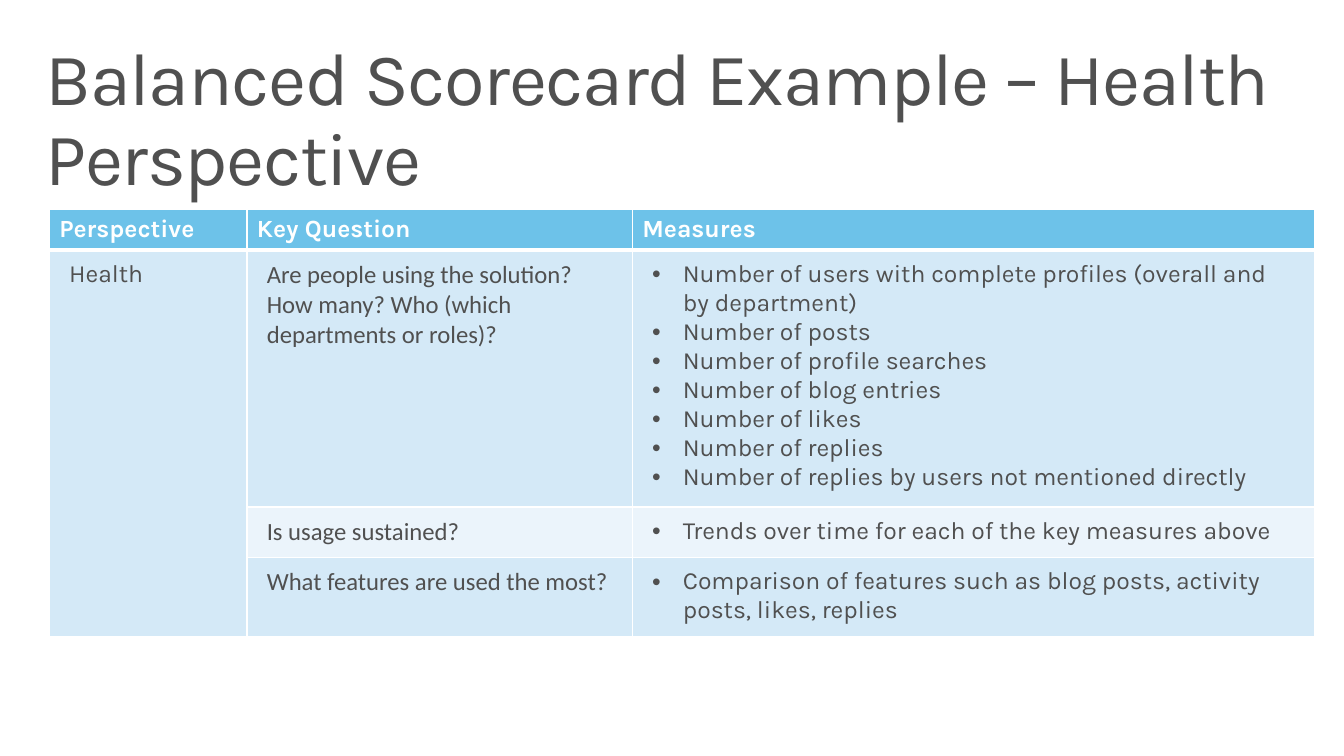
from lxml import etree
from pptx import Presentation
from pptx.dml.color import RGBColor
from pptx.enum import text
from pptx.oxml import ns
from pptx.util import Inches, Pt

WHITE = RGBColor(0xFF, 0xFF, 0xFF)
GRAY = RGBColor(0x50, 0x50, 0x50)
HEADER_BLUE = RGBColor(0x6D, 0xC2, 0xE9)
PALE_BLUE = RGBColor(0xD4, 0xE9, 0xF7)
PALEST_BLUE = RGBColor(0xEB, 0xF4, 0xFB)


def write(frame, lines, size=18, font="Karla", color=GRAY, bold=False,
          bullet=False, spacing=None, tracking=None):
    for i, line in enumerate(lines):
        paragraph = frame.paragraphs[0] if i == 0 else frame.add_paragraph()
        if bullet:
            properties = paragraph._p.get_or_add_pPr()
            properties.set("marL", str(Inches(0.31)))
            properties.set("indent", str(Inches(-0.31)))
            etree.SubElement(properties, ns.qn("a:buFont"), typeface="Arial")
            etree.SubElement(properties, ns.qn("a:buChar"), char="•")
        if spacing:
            paragraph.line_spacing = spacing
        run = paragraph.add_run()
        run.text = line
        run.font.size = Pt(size)
        run.font.name = font
        run.font.bold = bold
        run.font.color.rgb = color
        if tracking:
            run._r.get_or_add_rPr().set("spc", str(tracking))


def style_cell(cell, fill, bottom=1):
    properties = cell._tc.get_or_add_tcPr()
    for side, width in (("L", 1), ("R", 1), ("T", 1), ("B", bottom)):
        border = etree.SubElement(properties, ns.qn(f"a:ln{side}"), w=str(Pt(width)))
        paint = etree.SubElement(border, ns.qn("a:solidFill"))
        etree.SubElement(paint, ns.qn("a:srgbClr"), val=str(WHITE))
    cell.fill.solid()
    cell.fill.fore_color.rgb = fill


prs = Presentation()
prs.slide_width = Inches(13.6)
prs.slide_height = Inches(7.65)
slide = prs.slides.add_slide(prs.slide_layouts[6])

title = slide.shapes.add_textbox(Inches(0.3), Inches(0.32), Inches(13), Inches(1)).text_frame
title.word_wrap = True
title.vertical_anchor = text.MSO_ANCHOR.TOP
title.margin_left = title.margin_right = Inches(0.16)
title.margin_top = title.margin_bottom = Inches(0.1)
write(title, ["Balanced Scorecard Example – Health Perspective"],
      size=54, spacing=0.9, tracking=-100)

headings = ["Perspective", "Key Question", "Measures"]
questions = [
    ("Are people using the solution? How many? Who (which departments or roles)?",
     ["Number of users with complete profiles (overall and by department)",
      "Number of posts",
      "Number of profile searches",
      "Number of blog entries",
      "Number of likes",
      "Number of replies",
      "Number of replies by users not mentioned directly"]),
    ("Is usage sustained?",
     ["Trends over time for each of the key measures above"]),
    ("What features are used the most?",
     ["Comparison of features such as blog posts, activity posts, likes, replies"]),
]
column_widths = [2, 3.9, 6.9]
row_heights = [0.41, 2.54, 0.51, 0.78]

scorecard = slide.shapes.add_table(
    len(row_heights), len(column_widths), Inches(0.5), Inches(2.12),
    Inches(sum(column_widths)), Inches(sum(row_heights))).table
for column, width in zip(scorecard.columns, column_widths):
    column.width = Inches(width)
for row, height in zip(scorecard.rows, row_heights):
    row.height = Inches(height)

for c, heading in enumerate(headings):
    cell = scorecard.cell(0, c)
    style_cell(cell, HEADER_BLUE, bottom=3)
    write(cell.text_frame, [heading], color=WHITE, bold=True)

for r, (question, measures) in enumerate(questions, start=1):
    band = PALE_BLUE if r % 2 else PALEST_BLUE
    for c in range(len(headings)):
        cell = scorecard.cell(r, c)
        style_cell(cell, PALE_BLUE if c == 0 else band)
        cell.margin_left = cell.margin_right = Inches(0.2)
        cell.margin_top = cell.margin_bottom = Inches(0.1)
    write(scorecard.cell(r, 1).text_frame, [question], font="Calibri")
    write(scorecard.cell(r, 2).text_frame, measures, bullet=True)

perspective = scorecard.cell(1, 0)
perspective.merge(scorecard.cell(len(questions), 0))
write(perspective.text_frame, ["Health"])

prs.save("out.pptx")
